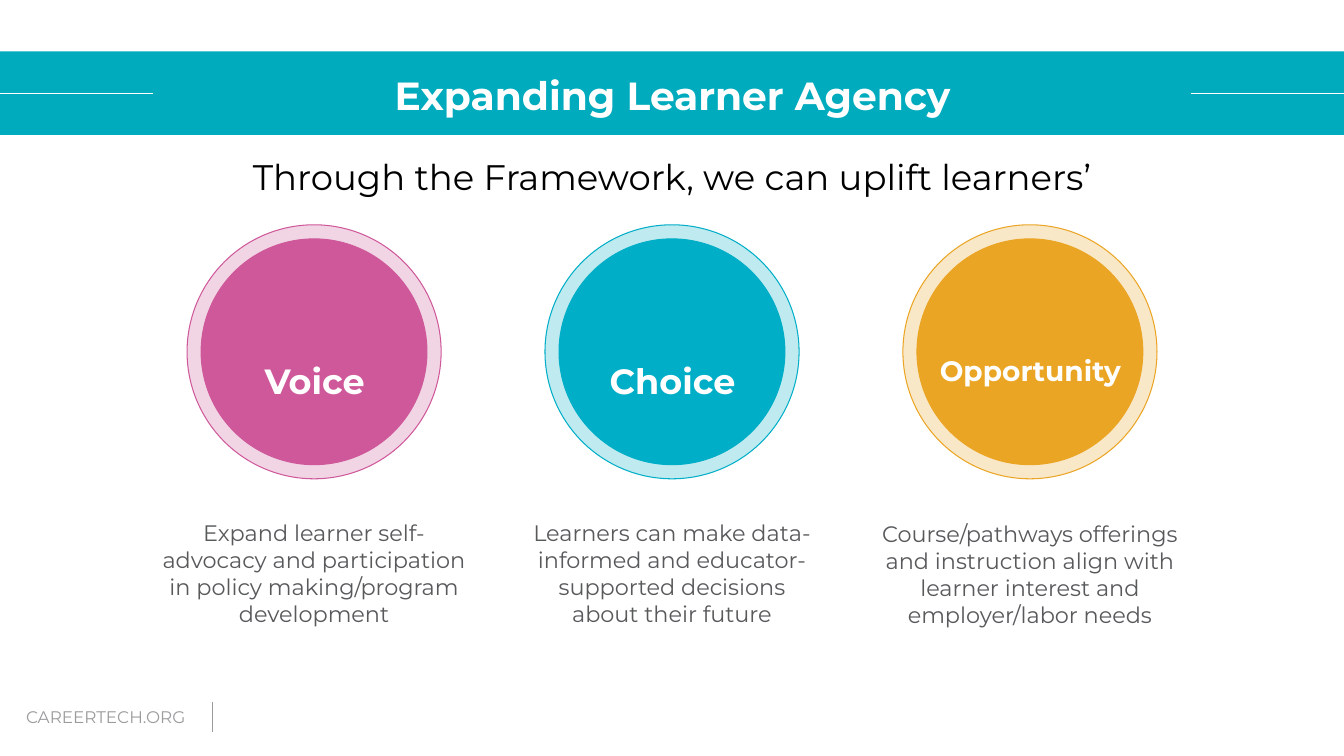
from dataclasses import dataclass
from lxml import etree
from pptx import Presentation
from pptx.dml.color import RGBColor
from pptx.enum.shapes import MSO_CONNECTOR, MSO_SHAPE
from pptx.enum.text import MSO_ANCHOR, MSO_AUTO_SIZE, PP_ALIGN
from pptx.oxml.ns import qn
from pptx.util import Inches, Pt

OVAL, RECT = MSO_SHAPE.OVAL, MSO_SHAPE.RECTANGLE
LINE = MSO_CONNECTOR.STRAIGHT
LEFT, CENTER = PP_ALIGN.LEFT, PP_ALIGN.CENTER
TOP, MIDDLE = MSO_ANCHOR.TOP, MSO_ANCHOR.MIDDLE
FIXED = MSO_AUTO_SIZE.NONE


@dataclass
class Theme:
    font: str = "Montserrat"
    band: str = "00ABBD"
    white: str = "FFFFFF"
    black: str = "000000"
    body: str = "58595B"
    muted: str = "999B9C"
    pink: str = "CF589A"
    teal: str = "00AEC7"
    gold: str = "EBA525"
    head: float = 28
    lead: float = 25.3
    label: float = 25
    small: float = 20
    text: float = 16
    foot: float = 12
    rule: float = 0.75


theme = Theme()


def rgb(code):
    return RGBColor.from_string(code)


def write(shape, text, size, color, bold=False, align=CENTER,
          space=1.0, pads=(0, 0, 0, 0), anchor=TOP):
    frame = shape.text_frame
    frame.text = text
    frame.word_wrap = True
    frame.auto_size = FIXED
    frame.vertical_anchor = anchor
    (frame.margin_left, frame.margin_top,
     frame.margin_right, frame.margin_bottom) = [Inches(p) for p in pads]
    para = frame.paragraphs[0]
    para.alignment = align
    para.line_spacing = space
    font = para.runs[0].font
    font.name, font.size, font.bold = theme.font, Pt(size), bold
    font.color.rgb = rgb(color)


# Slide and its three-column grid
deck = Presentation()
wide, high = 13.33, 7.5
deck.slide_width, deck.slide_height = Inches(wide), Inches(high)
slide = deck.slides.add_slide(deck.slide_layouts[5])
shapes = slide.shapes
mid, step = wide / 2, 3.55
band_top, band_high = 0.51, 0.83
foot_top, foot_high = 6.96, 0.3

# Title band
band = shapes.add_shape(RECT, 0, Inches(band_top), Inches(wide), Inches(band_high))
band.shadow.inherit = False
band.fill.solid()
band.fill.fore_color.rgb = rgb(theme.band)
band.line.fill.background()

# Title, in front of the band
title = shapes.title
band.element.addnext(title.element)
title.left, title.top = Inches(1.64), Inches(band_top)
title.width, title.height = Inches(10.06), Inches(band_high)
write(title, "Expanding Learner Agency", theme.head, theme.white, True,
      space=0.9, pads=(0, 0.1, 0, 0), anchor=MIDDLE)

# Band rules and footer divider
rules = [
    (0, 0.93, 1.52, 0.93, theme.white),
    (wide - 1.52, 0.93, wide, 0.93, theme.white),
    (2.11, foot_top, 2.11, foot_top + foot_high, theme.muted),
]
for x1, y1, x2, y2, color in rules:
    rule = shapes.add_connector(LINE, Inches(x1), Inches(y1), Inches(x2), Inches(y2))
    rule.line.color.rgb = rgb(color)
    rule.line.width = Pt(theme.rule)
    etree.SubElement(rule.element.spPr, qn("a:effectLst"))

# Footer and lead sentence
foot = shapes.add_textbox(Inches(0.16), Inches(foot_top), Inches(1.96), Inches(foot_high))
write(foot, "CAREERTECH.ORG", theme.foot, theme.muted, align=LEFT,
      pads=(0.1, 0.05, 0.1, 0.05))
lead = shapes.add_textbox(Inches(mid - 4.65), Inches(1.46), Inches(9.3), Inches(0.65))
write(lead, "Through the Framework, we can uplift learners’", theme.lead,
      theme.black, space=0.9, pads=(0.13,) * 4)

# Columns: ringed disc, label and description
columns = [
    ("Voice", theme.label, theme.pink, 3.22, 5.15,
     "Expand learner self-advocacy and participation in policy making/program development"),
    ("Choice", theme.label, theme.teal, 2.89, 5.15,
     "Learners can make data-informed and educator-supported decisions about their future"),
    ("Opportunity", theme.small, theme.gold, 3.22, 5.16,
     "Course/pathways offerings and instruction align with learner interest "
     "and employer/labor needs"),
]
for col, (name, size, color, span, top, text) in enumerate(columns):
    x, y = mid + (col - 1) * step, 3.49
    group = shapes.add_group_shape()
    for width, alpha in ((2.52, 25), (2.24, 100)):
        disc = group.shapes.add_shape(OVAL, Inches(x - width / 2), Inches(y - width / 2),
                                      Inches(width), Inches(width))
        disc.shadow.inherit = False
        disc.fill.solid()
        disc.fill.fore_color.rgb = rgb(color)
        if alpha < 100:
            tint = disc.element.spPr.find(qn("a:solidFill")).find(qn("a:srgbClr"))
            etree.SubElement(tint, qn("a:alpha"), val=str(alpha * 1000))
        disc.line.color.rgb = rgb(color)
        disc.line.width = Pt(theme.rule)

    label = shapes.add_textbox(Inches(x - 1), Inches(3.23), Inches(2.01), Inches(0.52))
    write(label, name, size, theme.white, True, space=1.68,
          pads=(0.1, 0.05, 0.1, 0.05))
    note = shapes.add_textbox(Inches(x - span / 2), Inches(top), Inches(span), Inches(1.35))
    write(note, text, theme.text, theme.body)

deck.save("out.pptx")
